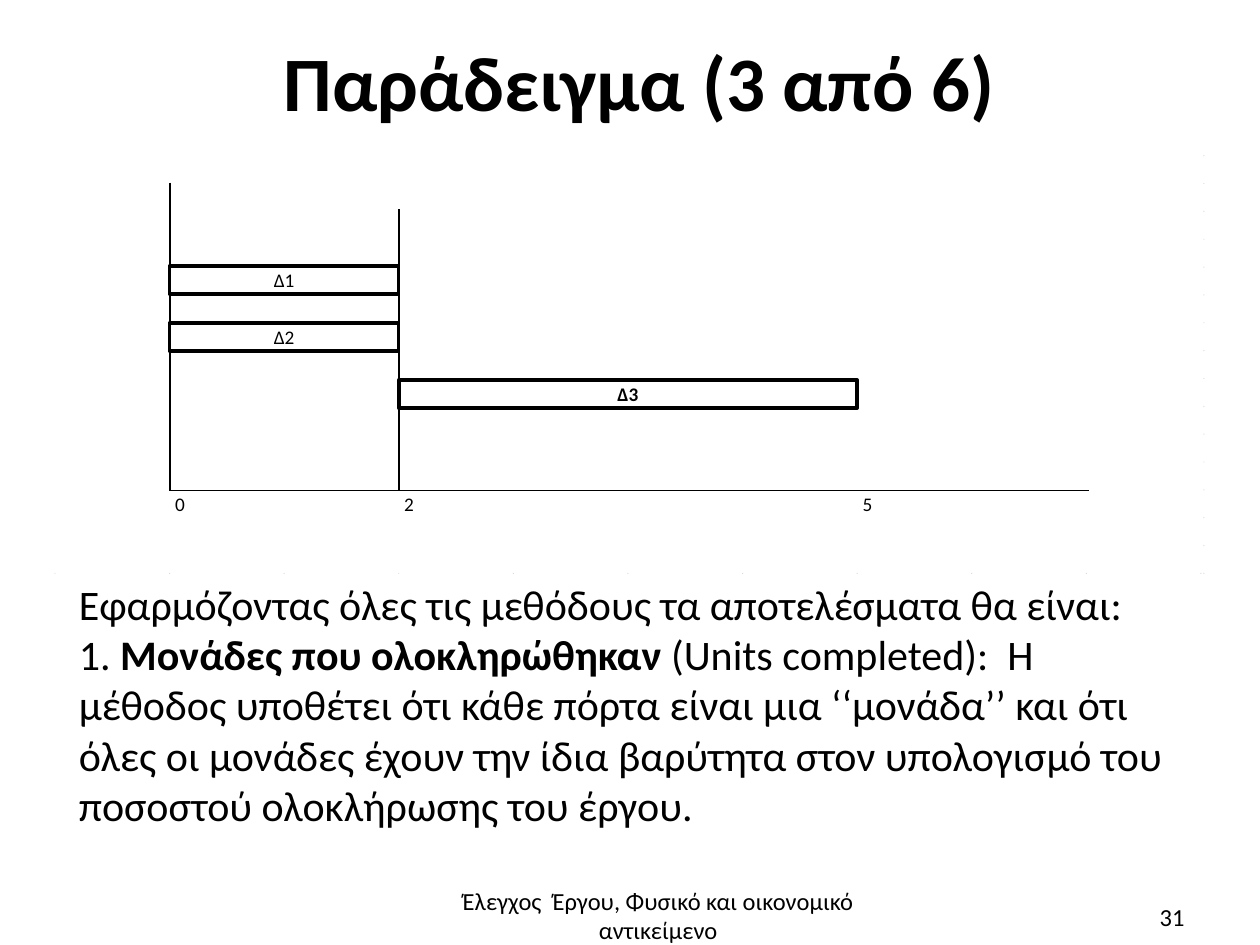
from dataclasses import dataclass

from lxml import etree
from pptx import Presentation
from pptx.dml.color import RGBColor
from pptx.enum import shapes, text
from pptx.oxml.ns import qn
from pptx.util import Cm, Pt


@dataclass(frozen=True)
class Theme:
    font: str = "Calibri"
    ink: RGBColor = RGBColor(0, 0, 0)
    dot: RGBColor = RGBColor(0xDA, 0xDC, 0xDD)
    title_size: int = 44
    body_size: int = 24
    footer_size: int = 14
    label_size: int = 11
    bar_line: float = 2
    axis_line: float = 1


@dataclass(frozen=True)
class Bar:
    label: str
    start: int
    end: int
    bold: bool = False


@dataclass(frozen=True)
class Tick:
    label: str
    column: int


@dataclass(frozen=True)
class Line:
    x1: float
    y1: float
    x2: float
    y2: float


THEME = Theme()
ORIGIN_X = 3.42
AXIS_Y = 9.89
COLUMN = 2.31
BAR_TOP = 5.36
BAR_STEP = 1.15
BAR_HEIGHT = 0.57
DOT_LEFT, DOT_RIGHT = 1.1, 24.26
DOT_TOP, DOT_BOTTOM = 3.13, 11.55
DOT_ROWS, DOT_COLUMNS = 16, 11
DOT_SIZE = 0.02


def column_x(column: int) -> float:
    return ORIGIN_X + column * COLUMN


BARS = [Bar("Δ1", 0, 2), Bar("Δ2", 0, 2), Bar("Δ3", 2, 6, bold=True)]
TICKS = [Tick("0", 0), Tick("2", 2), Tick("5", 6)]
LINES = [
    Line(column_x(0), 3.68, column_x(0), AXIS_Y),
    Line(column_x(2), 4.22, column_x(2), AXIS_Y),
    Line(column_x(0), AXIS_Y, 21.96, AXIS_Y),
]
BODY = [
    [("Εφαρμόζοντας όλες τις μεθόδους τα αποτελέσματα θα είναι:", False)],
    [
        ("1. ", False),
        ("Μονάδες που ολοκληρώθηκαν", True),
        (
            " (Units completed):  Η μέθοδος υποθέτει ότι κάθε πόρτα είναι μια "
            "‘‘μονάδα’’ και ότι όλες οι μονάδες έχουν την ίδια βαρύτητα στον "
            "υπολογισμό του ποσοστού ολοκλήρωσης του έργου.",
            False,
        ),
    ],
]


def format_font(font, size: int, bold: bool = False) -> None:
    font.name = THEME.font
    font.size = Pt(size)
    font.bold = bold
    font.color.rgb = THEME.ink


def clear_margins(frame) -> None:
    frame.margin_left = frame.margin_right = 0
    frame.margin_top = frame.margin_bottom = 0


def add_title(slide, title: str) -> None:
    shape = slide.shapes.title
    shape.left, shape.top, shape.width, shape.height = Cm(1.3), Cm(-0.08), Cm(23.19), Cm(3.5)
    frame = shape.text_frame
    frame.text = title
    frame.auto_size = text.MSO_AUTO_SIZE.NONE
    frame.vertical_anchor = text.MSO_ANCHOR.MIDDLE
    clear_margins(frame)
    frame.margin_top = Cm(0.05)
    paragraph = frame.paragraphs[0]
    paragraph.alignment = text.PP_ALIGN.CENTER
    paragraph.line_spacing = 0.98
    format_font(paragraph.runs[0].font, THEME.title_size, bold=True)


def add_line(slide, line: Line) -> None:
    connector = slide.shapes.add_connector(
        shapes.MSO_CONNECTOR.STRAIGHT, Cm(line.x1), Cm(line.y1), Cm(line.x2), Cm(line.y2)
    )
    connector.line.color.rgb = THEME.ink
    connector.line.width = Pt(THEME.axis_line)
    etree.SubElement(connector._element.spPr, qn("a:effectLst"))


def add_rectangle(slide, left: float, top: float, width: float, height: float):
    shape = slide.shapes.add_shape(
        shapes.MSO_SHAPE.RECTANGLE, Cm(left), Cm(top), Cm(width), Cm(height)
    )
    shape.shadow.inherit = False
    return shape


def add_bar(slide, bar: Bar, row: int) -> None:
    shape = add_rectangle(
        slide,
        column_x(bar.start),
        BAR_TOP + row * BAR_STEP,
        (bar.end - bar.start) * COLUMN,
        BAR_HEIGHT,
    )
    shape.fill.background()
    shape.line.color.rgb = THEME.ink
    shape.line.width = Pt(THEME.bar_line)
    frame = shape.text_frame
    frame.text = bar.label
    frame.vertical_anchor = text.MSO_ANCHOR.MIDDLE
    clear_margins(frame)
    frame.paragraphs[0].alignment = text.PP_ALIGN.CENTER
    format_font(frame.paragraphs[0].runs[0].font, THEME.label_size, bar.bold)


def add_dot(slide, left: float, top: float) -> None:
    shape = add_rectangle(slide, left, top, DOT_SIZE, DOT_SIZE)
    shape.fill.solid()
    shape.fill.fore_color.rgb = THEME.dot
    shape.line.fill.background()


def add_label(slide, label: str, left: float, top: float, width: float, height: float,
              size: int, alignment: text.PP_ALIGN):
    box = slide.shapes.add_textbox(Cm(left), Cm(top), Cm(width), Cm(height))
    frame = box.text_frame
    frame.word_wrap = True
    frame.text = label
    frame.paragraphs[0].alignment = alignment
    format_font(frame.paragraphs[0].runs[0].font, size)
    return frame


def add_tick(slide, tick: Tick) -> None:
    frame = add_label(slide, tick.label, column_x(tick.column) + 0.11, 9.93, 0.5, 0.5,
                      THEME.label_size, text.PP_ALIGN.LEFT)
    frame.word_wrap = False
    clear_margins(frame)


def add_body(slide) -> None:
    box = slide.shapes.add_textbox(Cm(1.04), Cm(11.53), Cm(23.09), Cm(5.38))
    frame = box.text_frame
    frame.word_wrap = True
    for index, pieces in enumerate(BODY):
        paragraph = frame.add_paragraph() if index else frame.paragraphs[0]
        paragraph._p.get_or_add_pPr().set("marL", str(Cm(0.3)))
        for piece, bold in pieces:
            run = paragraph.add_run()
            run.text = piece
            format_font(run.font, THEME.body_size, bold)


def main() -> None:
    presentation = Presentation()
    presentation.slide_width, presentation.slide_height = Cm(25.4), Cm(19.05)
    slide = presentation.slides.add_slide(presentation.slide_layouts[5])
    add_title(slide, "Παράδειγμα (3 από 6)")
    for column in range(DOT_COLUMNS):
        add_dot(slide, DOT_LEFT + column * COLUMN, DOT_BOTTOM)
    row_step = (DOT_BOTTOM - DOT_TOP) / (DOT_ROWS - 1)
    for row in range(DOT_ROWS):
        add_dot(slide, DOT_RIGHT, DOT_TOP + row * row_step)
    for line in LINES:
        add_line(slide, line)
    for row, bar in enumerate(BARS):
        add_bar(slide, bar, row)
    for tick in TICKS:
        add_tick(slide, tick)
    add_body(slide)
    add_label(slide, "Έλεγχος  Έργου, Φυσικό και οικονομικό αντικείμενο",
              8.84, 17.73, 8.86, 1.4, THEME.footer_size, text.PP_ALIGN.CENTER)
    add_label(slide, "31", 18.21, 18.06, 5.92, 1.02, THEME.footer_size, text.PP_ALIGN.RIGHT)
    presentation.save("out.pptx")


if __name__ == "__main__":
    main()
